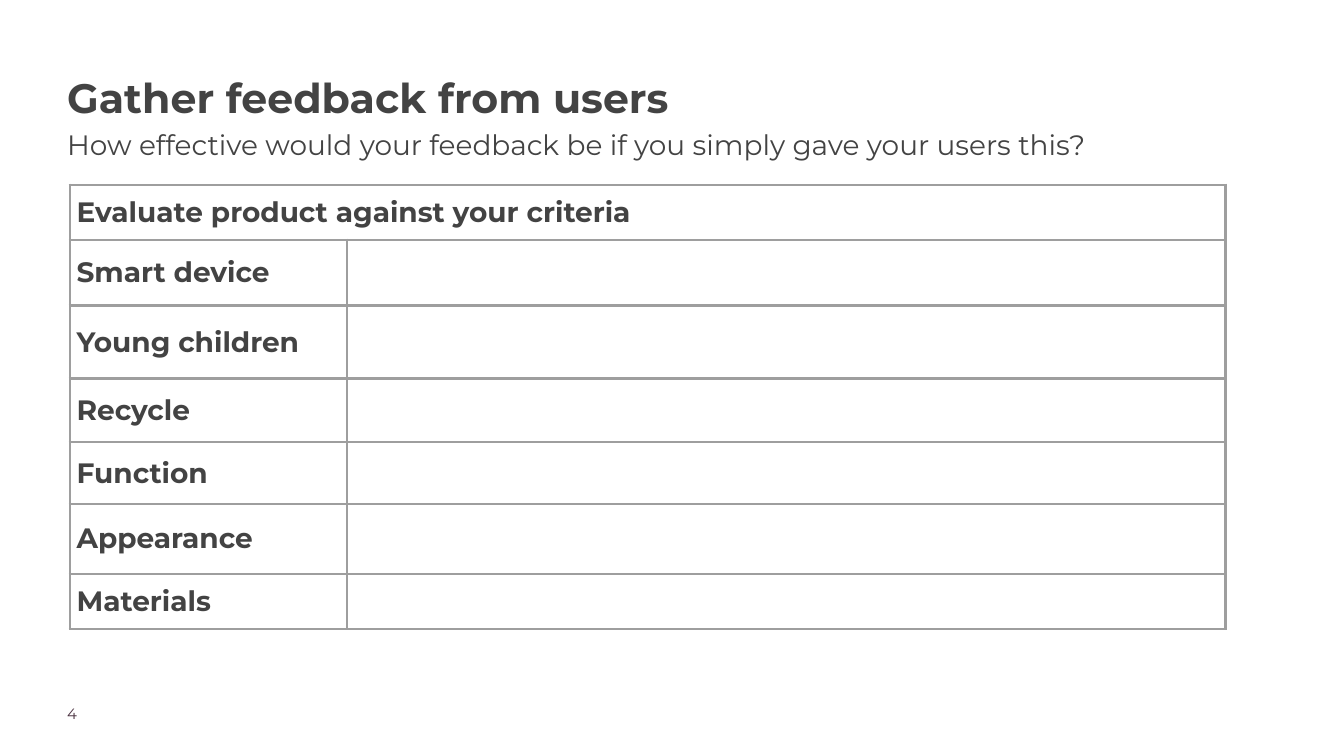
from dataclasses import dataclass

from lxml.etree import SubElement
from pptx import Presentation
from pptx.dml.color import RGBColor
from pptx.enum.text import MSO_ANCHOR as Anchor, MSO_AUTO_SIZE as AutoSize, PP_ALIGN as Align
from pptx.oxml.ns import qn
from pptx.util import Inches, Pt

# The page is a grid of 20 columns by 11.25 rows
GRID_COLUMNS, GRID_ROWS = 20, 11.25
UNIT = Inches(1)

FONT = "Montserrat"
DARK_GREY = RGBColor(0x43, 0x43, 0x43)
PLUM = RGBColor(0x4B, 0x32, 0x41)
BORDER_GREY = RGBColor(0x9E, 0x9E, 0x9E)
BORDER_WIDTH = Pt(3)
CELL_MARGIN = 0.1


@dataclass(frozen=True)
class Box:
    column: float
    row: float
    columns: float
    rows: float

    def lengths(self) -> tuple[int, ...]:
        return tuple(grid(n) for n in (self.column, self.row, self.columns, self.rows))


@dataclass(frozen=True)
class TextStyle:
    size: int
    color: RGBColor = DARK_GREY
    bold: bool = False
    line_spacing: float = 1.0
    space_after: int = 0


@dataclass(frozen=True)
class Criterion:
    label: str
    rows: float


TITLE = TextStyle(44, bold=True, line_spacing=1.15)
QUESTION = TextStyle(30, line_spacing=1.3, space_after=20)
LABEL = TextStyle(30, bold=True)
PAGE_NUMBER = TextStyle(16, PLUM)

HEADING = Criterion("Evaluate product against your criteria", 0.82)
CRITERIA = [
    Criterion("Smart device", 0.98),
    Criterion("Young children", 1.08),
    Criterion("Recycle", 0.95),
    Criterion("Function", 0.92),
    Criterion("Appearance", 1.04),
    Criterion("Materials", 0.82),
]
TABLE_COLUMNS = (4.12, 13.08)


def grid(count: float) -> int:
    return round(count * UNIT)


def write(frame, text: str, style: TextStyle) -> None:
    paragraph = frame.paragraphs[0]
    paragraph.text = text
    properties = paragraph._p.get_or_add_pPr()
    properties.set("marL", "0")
    properties.set("indent", "0")
    SubElement(properties, qn("a:buNone"))
    paragraph.alignment = Align.LEFT
    paragraph.line_spacing = style.line_spacing
    paragraph.space_before = Pt(0)
    paragraph.space_after = Pt(style.space_after)
    font = paragraph.font
    font.name, font.size, font.bold = FONT, Pt(style.size), style.bold
    font.color.rgb = style.color


def place_text(shape, box: Box, text: str, style: TextStyle) -> None:
    shape.left, shape.top, shape.width, shape.height = box.lengths()
    frame = shape.text_frame
    frame.word_wrap = True
    frame.auto_size = AutoSize.NONE
    frame.vertical_anchor = Anchor.TOP
    frame.margin_left = frame.margin_right = frame.margin_top = frame.margin_bottom = 0
    write(frame, text, style)


def format_cell(cell) -> None:
    properties = cell._tc.get_or_add_tcPr()
    for side in ("a:lnL", "a:lnR", "a:lnT", "a:lnB"):
        line = SubElement(properties, qn(side), w=str(BORDER_WIDTH))
        fill = SubElement(line, qn("a:solidFill"))
        SubElement(fill, qn("a:srgbClr"), val=str(BORDER_GREY))
    cell.fill.background()
    cell.vertical_anchor = Anchor.MIDDLE
    margin = grid(CELL_MARGIN)
    cell.margin_left = cell.margin_right = cell.margin_top = cell.margin_bottom = margin


def add_criteria_table(slide, column: float, row: float) -> None:
    entries = [HEADING, *CRITERIA]
    box = Box(column, row, sum(TABLE_COLUMNS), sum(entry.rows for entry in entries))
    table = slide.shapes.add_table(len(entries), len(TABLE_COLUMNS), *box.lengths()).table
    table.first_row = table.horz_banding = False
    for table_column, width in zip(table.columns, TABLE_COLUMNS):
        table_column.width = grid(width)
    for table_row, entry in zip(table.rows, entries):
        table_row.height = grid(entry.rows)
        for cell in table_row.cells:
            format_cell(cell)
        write(table_row.cells[0].text_frame, entry.label, LABEL)
    table.cell(0, 0).merge(table.cell(0, 1))


def main() -> None:
    deck = Presentation()
    deck.slide_width, deck.slide_height = grid(GRID_COLUMNS), grid(GRID_ROWS)
    slide = deck.slides.add_slide(deck.slide_layouts[1])

    # Title and opening question
    place_text(slide.shapes.title, Box(1, 0.97, 14.44, 1.78),
               "Gather feedback from users", TITLE)
    place_text(slide.placeholders[1], Box(1, 1.74, 15.96, 1.15),
               "How effective would your feedback be if you simply gave your users this?",
               QUESTION)

    # Evaluation grid
    add_criteria_table(slide, 1.04, 2.75)

    # Page number
    number_box = Box(1, 10.48, 1.57, 0.39)
    place_text(slide.shapes.add_textbox(*number_box.lengths()), number_box, "4", PAGE_NUMBER)

    deck.save("out.pptx")


if __name__ == "__main__":
    main()
